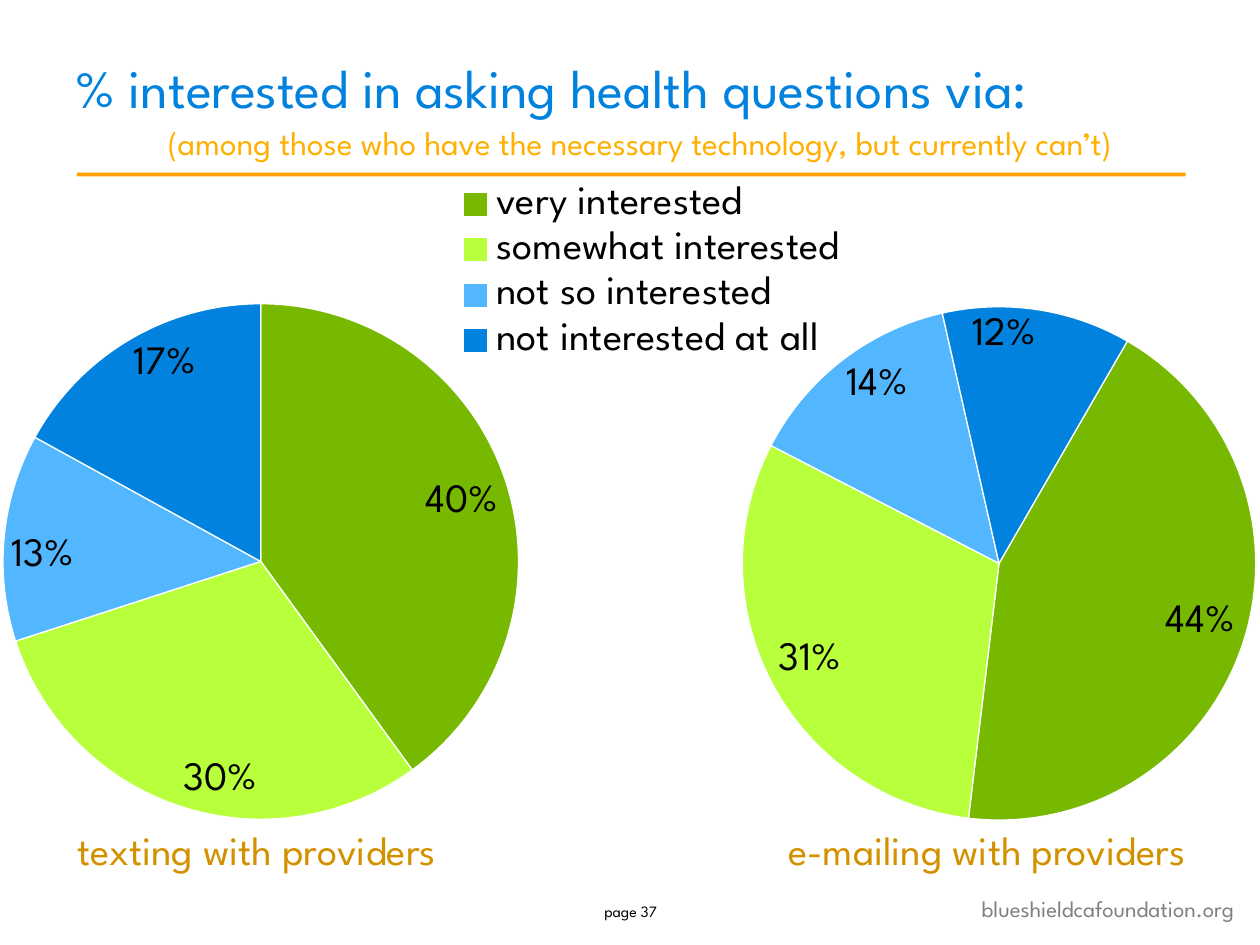
from lxml import etree
from pptx import Presentation
from pptx.chart.data import CategoryChartData
from pptx.dml.color import RGBColor
from pptx.enum.chart import XL_CHART_TYPE, XL_LABEL_POSITION, XL_LEGEND_POSITION
from pptx.enum.shapes import MSO_SHAPE
from pptx.enum.text import MSO_ANCHOR, PP_ALIGN
from pptx.oxml.ns import qn
from pptx.util import Inches, Pt

PIE = XL_CHART_TYPE.PIE
INSIDE_END = XL_LABEL_POSITION.INSIDE_END
LEGEND_RIGHT = XL_LEGEND_POSITION.RIGHT
ROUNDED = MSO_SHAPE.ROUNDED_RECTANGLE
LEFT, CENTER, RIGHT = PP_ALIGN.LEFT, PP_ALIGN.CENTER, PP_ALIGN.RIGHT
TOP, MIDDLE, BOTTOM = MSO_ANCHOR.TOP, MSO_ANCHOR.MIDDLE, MSO_ANCHOR.BOTTOM

BLACK = RGBColor(0x00, 0x00, 0x00)
WHITE = RGBColor(0xFF, 0xFF, 0xFF)
GRAY = RGBColor(0x7E, 0x80, 0x82)
GREEN = RGBColor(0x76, 0xB9, 0x00)
LIME = RGBColor(0xB8, 0xFF, 0x3C)
SKY = RGBColor(0x52, 0xB7, 0xFF)
BLUE = RGBColor(0x00, 0x82, 0xDE)
ORANGE = RGBColor(0xFF, 0xA1, 0x00)
AMBER = RGBColor(0xFF, 0xB0, 0x00)
OCHRE = RGBColor(0xD3, 0x91, 0x00)

LEVELS = {
    "very interested": GREEN,
    "somewhat interested": LIME,
    "not so interested": SKY,
    "not interested at all": BLUE,
}


class InterestSlide:
    font = "League Spartan"
    columns, rows = 100, 75
    label_size = Pt(23)

    def __init__(self, deck):
        self.cell_width = deck.slide_width / self.columns
        self.cell_height = deck.slide_height / self.rows
        self.slide = deck.slides.add_slide(deck.slide_layouts[5])

    def area(self, column, row, width, height):
        return (round(column * self.cell_width), round(row * self.cell_height),
                round(width * self.cell_width), round(height * self.cell_height))

    def set_words(self, frame, words, size, color, align, anchor):
        frame.text = words
        frame.word_wrap = True
        frame.vertical_anchor = anchor
        paragraph = frame.paragraphs[0]
        paragraph.alignment = align
        font = paragraph.runs[0].font
        font.name, font.size, font.color.rgb = self.font, Pt(size), color
        return paragraph

    def title(self, words, area):
        heading = self.slide.shapes.title
        heading.left, heading.top, heading.width, heading.height = self.area(*area)
        paragraph = self.set_words(heading.text_frame, words, 31, BLUE, LEFT, BOTTOM)
        paragraph.line_spacing = Pt(42)
        heading.text_frame.margin_bottom = Inches(0.63)

    def text(self, words, area, size, color, align=CENTER, anchor=TOP):
        box = self.slide.shapes.add_textbox(*self.area(*area))
        self.set_words(box.text_frame, words, size, color, align, anchor)

    def rule(self, area, color):
        bar = self.slide.shapes.add_shape(ROUNDED, *self.area(*area))
        bar.shadow.inherit = False
        bar.fill.solid()
        bar.fill.fore_color.rgb = color
        bar.line.fill.background()

    def layout(self, shares, inner=False):
        layout = etree.Element(qn("c:layout"))
        manual = etree.SubElement(layout, qn("c:manualLayout"))
        settings = [("layoutTarget", "inner")] if inner else []
        settings += [("xMode", "edge"), ("yMode", "edge")]
        settings += zip("xywh", shares)
        for tag, value in settings:
            etree.SubElement(manual, qn(f"c:{tag}")).set("val", str(value))
        return layout

    def pie(self, area, shares, plot_shares, start=0, legend_shares=None):
        data = CategoryChartData(number_format="0%")
        data.categories = list(LEVELS)
        data.add_series("Interest", shares)
        chart = self.slide.shapes.add_chart(PIE, *self.area(*area), data).chart
        chart.has_title = False
        chart.font.name, chart.font.size = self.font, Pt(18)
        chart.font.color.rgb = BLACK

        plot = chart.plots[0]
        plot.vary_by_categories = True
        for index, color in enumerate(LEVELS.values()):
            slice_format = plot.series[0].points[index].format
            slice_format.fill.solid()
            slice_format.fill.fore_color.rgb = color
            slice_format.line.color.rgb = WHITE
            slice_format.line.width = Pt(0.75)

        plot.has_data_labels = True
        labels = plot.data_labels
        labels.show_value = True
        labels.show_percentage = False
        labels.number_format, labels.number_format_is_linked = "0%", False
        labels.position = INSIDE_END
        labels.font.name, labels.font.size = self.font, self.label_size
        labels.font.color.rgb = BLACK

        plot_area = chart.element.find(".//" + qn("c:plotArea"))
        for automatic in plot_area.findall(qn("c:layout")):
            plot_area.remove(automatic)
        plot_area.insert(0, self.layout(plot_shares, inner=True))
        pie = plot_area.find(qn("c:pieChart"))
        for angle in pie.findall(qn("c:firstSliceAng")):
            pie.remove(angle)
        etree.SubElement(pie, qn("c:firstSliceAng")).set("val", str(start))

        chart.has_legend = legend_shares is not None
        if chart.has_legend:
            self.legend(chart, legend_shares)

    def legend(self, chart, shares):
        legend = chart.legend
        legend.position = LEGEND_RIGHT
        legend.include_in_layout = False
        legend.font.name, legend.font.size = self.font, self.label_size
        legend.font.color.rgb = BLACK
        element = chart.element.find(".//" + qn("c:legend"))
        for automatic in element.findall(qn("c:layout")):
            element.remove(automatic)
        element.find(qn("c:legendPos")).addnext(self.layout(shares))


def main():
    deck = Presentation()
    deck.slide_width, deck.slide_height = Inches(10), Inches(7.5)
    page = InterestSlide(deck)
    page.text("blueshieldcafoundation.org", (72, 70.5, 26.9, 3.2), 13, GRAY, RIGHT)
    page.rule((6.1, 13.7, 88, 0.3), ORANGE)
    page.title("% interested in asking health questions via:", (5, 4.1, 90, 11.7))
    page.pie((0, 12.5, 90, 55.3), (0.4, 0.3, 0.13, 0.17),
             (0, 0.21, 0.46, 0.74), legend_shares=(0.4, 0.03, 0.35, 0.27))
    page.pie((10, 15.8, 90, 50.3), (0.44, 0.31, 0.14, 0.12),
             (0.54, 0.17, 0.46, 0.81), start=30)
    page.text("page 37", (45.6, 69.7, 8.9, 5.2), 9, BLACK, anchor=MIDDLE)
    page.text("texting with providers", (0.8, 65, 39.2, 4.9), 23, OCHRE)
    page.text("e-mailing with providers", (57.5, 65, 41.7, 4.9), 23, OCHRE)
    page.text("(among those who have the necessary technology, but currently can’t)",
              (0.8, 9.2, 100, 4.2), 19, AMBER)
    deck.save("out.pptx")


if __name__ == "__main__":
    main()
